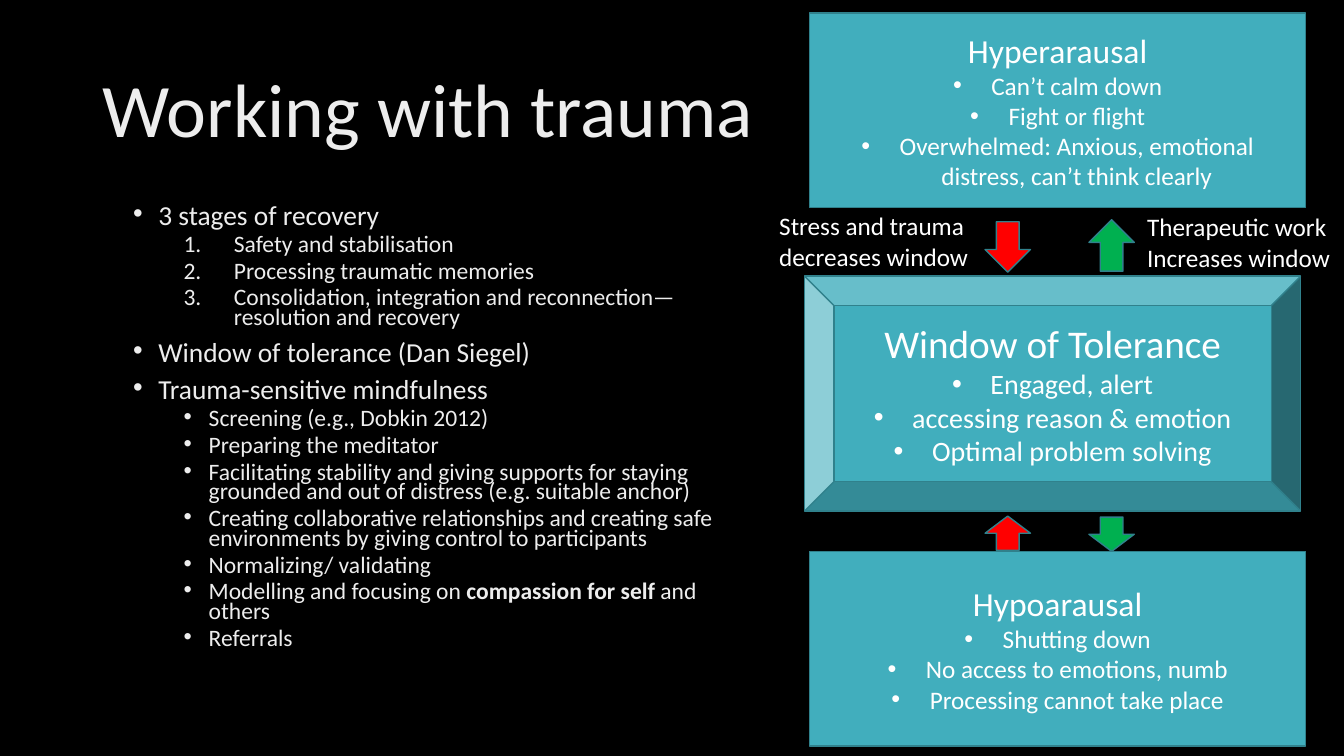
from lxml import etree
from pptx import Presentation
from pptx.dml.color import RGBColor
from pptx.enum.shapes import MSO_SHAPE
from pptx.enum.text import MSO_ANCHOR, MSO_AUTO_SIZE, PP_ALIGN
from pptx.oxml.ns import qn
from pptx.util import Inches, Pt

RECT, BEVEL, ARROW = MSO_SHAPE.RECTANGLE, MSO_SHAPE.BEVEL, MSO_SHAPE.UP_ARROW
MIDDLE, TOP = MSO_ANCHOR.MIDDLE, MSO_ANCHOR.TOP
LEFT, CENTER = PP_ALIGN.LEFT, PP_ALIGN.CENTER
NO_FIT, GROW = MSO_AUTO_SIZE.NONE, MSO_AUTO_SIZE.SHAPE_TO_FIT_TEXT

FONT = "Calibri"
BLACK, WHITE, PALE = "000000", "FFFFFF", "EDEDED"
TEAL, EDGE, RED, GREEN = "41AEBD", "30818C", "FF0000", "00B050"

# Content
TITLE = "Working with trauma"
# Kind of line, text; asterisks enclose bold words
POINTS = [
    ("main", "3 stages of recovery"),
    ("step", "Safety and stabilisation"),
    ("step", "Processing traumatic memories"),
    ("step", "Consolidation, integration and reconnection—resolution and recovery"),
    ("main", "Window of tolerance (Dan Siegel)"),
    ("main", "Trauma-sensitive mindfulness"),
    ("sub", "Screening (e.g., Dobkin 2012)"),
    ("sub", "Preparing the meditator"),
    ("sub", "Facilitating stability and giving supports for staying grounded "
            "and out of distress (e.g. suitable anchor)"),
    ("sub", "Creating collaborative relationships and creating safe "
            "environments by giving control to participants"),
    ("sub", "Normalizing/ validating"),
    ("sub", "Modelling and focusing on *compassion for self *and others"),
    ("sub", "Referrals"),
]
# Level, indent, hanging, size, space before, numbered
KINDS = {
    "main": (0, 0.25, 0.25, 19.6, 10, False),
    "step": (1, 1, 0.5, 16.8, 5, True),
    "sub": (1, 0.75, 0.25, 16.8, 5, False),
}
# Shape, place, head size, list size, head, list
STATES = [
    (BEVEL, (7.98, 2.74, 4.92, 2.33), 28, 20, "Window of Tolerance",
     ["Engaged, alert", "accessing reason & emotion", "Optimal problem solving"]),
    (RECT, (8.03, 0.13, 4.92, 1.93), 24, 18, "Hyperarausal",
     ["Can’t calm down", "Fight or flight",
      "Overwhelmed: Anxious, emotional distress, can’t think clearly"]),
    (RECT, (8.03, 5.47, 4.92, 1.93), 24, 18, "Hypoarausal",
     ["Shutting down", "No access to emotions, numb",
      "Processing cannot take place"]),
]
# Left, top, height, turn, colour
ARROWS = [
    (9.77, 5.12, 0.34, 0, RED),
    (10.8, 2.18, 0.51, 0, GREEN),
    (10.8, 5.13, 0.34, 180, GREEN),
    (9.77, 2.2, 0.5, 180, RED),
]
LABELS = [
    ((7.63, 2.04, 2.15, 0.71), ["Stress and trauma", "decreases window"]),
    ((11.28, 2.05, 2.04, 0.71), ["Therapeutic work", "Increases window"]),
]


def rgb(code):
    return RGBColor.from_string(code)


def place(box):
    return [Inches(n) for n in box]


def assign(item, **values):
    for name, value in values.items():
        setattr(item, name, value)


def bullet(para, indent, hang, numbered=False):
    props = para._p.get_or_add_pPr()
    props.set("marL", str(Inches(indent)))
    props.set("indent", str(-Inches(hang)))
    if numbered:
        etree.SubElement(props, qn("a:buFont"), typeface="+mj-lt")
        etree.SubElement(props, qn("a:buAutoNum"), type="arabicPeriod")
    else:
        etree.SubElement(props, qn("a:buFont"), typeface="Arial")
        etree.SubElement(props, qn("a:buChar"), char="•")


def write(para, text, size, color):
    for i, part in enumerate(text.split("*")):
        run = para.add_run()
        run.text = part
        assign(run.font, name=FONT, size=Pt(size), bold=i % 2 == 1)
        run.font.color.rgb = rgb(color)


def lines(frame, items):
    """Yield a paragraph with each item, starting with the one present."""
    for i, item in enumerate(items):
        yield (frame.add_paragraph() if i else frame.paragraphs[0]), item


def add_form(slide, kind, box, fill):
    form = slide.shapes.add_shape(kind, *place(box))
    form.shadow.inherit = False
    form.fill.solid()
    form.fill.fore_color.rgb = rgb(fill)
    form.line.color.rgb = rgb(EDGE)
    form.line.width = Pt(1)
    return form


def set_place(holder, box):
    left, top, width, height = place(box)
    assign(holder, left=left, top=top, width=width, height=height)


def main():
    deck = Presentation()
    assign(deck, slide_width=Inches(13.33), slide_height=Inches(7.5))
    slide = deck.slides.add_slide(deck.slide_layouts[1])
    slide.background.fill.solid()
    slide.background.fill.fore_color.rgb = rgb(BLACK)

    # Title
    title = slide.shapes.title
    set_place(title, (0.92, 0.4, 11.5, 1.45))
    assign(title.text_frame, vertical_anchor=MIDDLE, auto_size=NO_FIT)
    para = title.text_frame.paragraphs[0]
    assign(para, alignment=LEFT, line_spacing=0.9)
    write(para, TITLE, 54, PALE)

    # Outline
    body = slide.placeholders[1]
    set_place(body, (1.22, 2, 6.11, 4.76))
    frame = body.text_frame
    assign(frame, vertical_anchor=TOP, auto_size=NO_FIT, word_wrap=True)
    for i, (para, (kind, text)) in enumerate(lines(frame, POINTS)):
        level, indent, hang, size, gap, numbered = KINDS[kind]
        assign(para, level=level, line_spacing=0.7,
               space_before=Pt(gap if i else 0))
        bullet(para, indent, hang, numbered)
        write(para, text, size, PALE)

    # States of arousal
    for kind, box, big, small, head, items in STATES:
        frame = add_form(slide, kind, box, TEAL).text_frame
        assign(frame, vertical_anchor=MIDDLE, word_wrap=True)
        for i, (para, text) in enumerate(lines(frame, [head] + items)):
            para.alignment = CENTER
            if i:
                bullet(para, 0.38, 0.38)
            write(para, text, small if i else big, WHITE)

    # Arrows between the states
    for left, top, height, turn, color in ARROWS:
        arrow = add_form(slide, ARROW, (left, top, 0.45, height), color)
        arrow.rotation = turn

    # Arrow labels
    for box, texts in LABELS:
        frame = slide.shapes.add_textbox(*place(box)).text_frame
        assign(frame, word_wrap=False, auto_size=GROW)
        for para, text in lines(frame, texts):
            write(para, text, 18, WHITE)

    deck.save("out.pptx")


if __name__ == "__main__":
    main()
